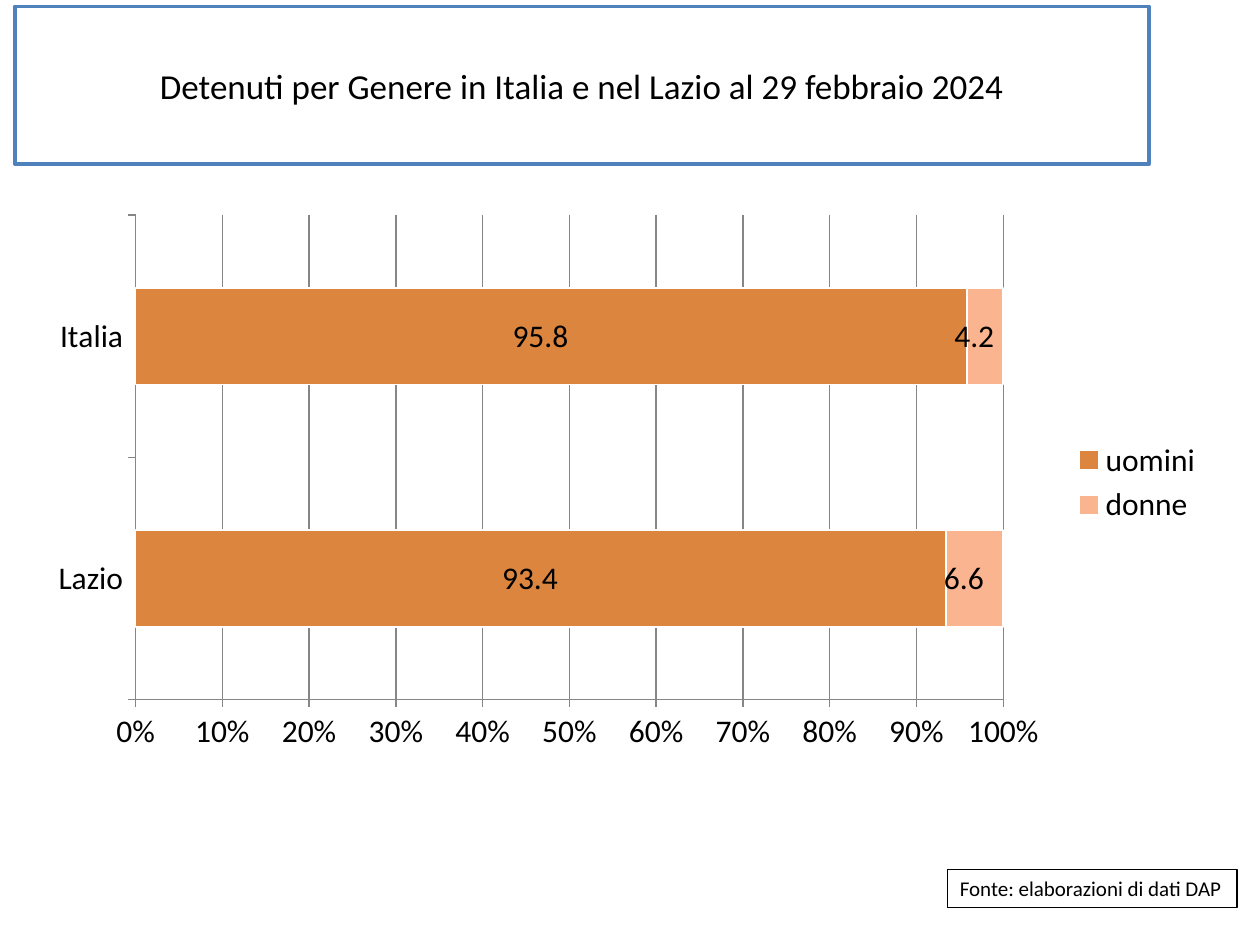
from lxml import etree
from pptx import Presentation
from pptx.chart.data import CategoryChartData
from pptx.dml.color import RGBColor
from pptx.enum.chart import XL_CHART_TYPE, XL_LABEL_POSITION, XL_LEGEND_POSITION, XL_TICK_MARK
from pptx.enum.shapes import MSO_SHAPE
from pptx.enum.text import MSO_ANCHOR, PP_ALIGN
from pptx.oxml.ns import qn
from pptx.util import Cm, Pt

RECT = MSO_SHAPE.RECTANGLE
BAR = XL_CHART_TYPE.BAR_STACKED_100
CENTER_LABEL = XL_LABEL_POSITION.CENTER
RIGHT = XL_LEGEND_POSITION.RIGHT
OUTSIDE = XL_TICK_MARK.OUTSIDE
MIDDLE = MSO_ANCHOR.MIDDLE
LEFT, CENTER = PP_ALIGN.LEFT, PP_ALIGN.CENTER

FONT = "Calibri"
BLACK = RGBColor(0x00, 0x00, 0x00)
WHITE = RGBColor(0xFF, 0xFF, 0xFF)
BLUE = RGBColor(0x4F, 0x81, 0xBD)
GRAY = RGBColor(0x86, 0x86, 0x86)
ORANGE = RGBColor(0xDC, 0x85, 0x3E)
PEACH = RGBColor(0xFA, 0xB4, 0x90)

LABEL_FORMAT = r"_-* #,##0.0\ _€_-;\-* #,##0.0\ _€_-;_-* "
CATEGORIES = ["Lazio", "Italia"]
SERIES = [("uomini", [93.4, 95.8], ORANGE), ("donne", [6.6, 4.2], PEACH)]


def set_font(font, size):
    font.name, font.size = FONT, Pt(size)
    font.color.rgb = BLACK


def add_text(tf, text, size=12, align=LEFT, wrap=True):
    tf.word_wrap = wrap
    tf.vertical_anchor = MIDDLE
    p = tf.paragraphs[0]
    p.alignment = align
    r = p.add_run()
    r.text = text
    set_font(r.font, size)


def add_box(s, box, text, line, line_width, **text_format):
    sp = s.shapes.add_shape(RECT, *map(Cm, box))
    sp.shadow.inherit = False
    sp.fill.solid()
    sp.fill.fore_color.rgb = WHITE
    sp.line.color.rgb = line
    sp.line.width = Pt(line_width)
    add_text(sp.text_frame, text, **text_format)


def set_plot_area(chart, **fractions):
    """Fix the inner plot area as fractions of the chart."""
    plot_area = chart.plots[0]._element.getparent()
    for old in plot_area.findall(qn("c:layout")):
        plot_area.remove(old)
    layout = etree.Element(qn("c:layout"))
    manual = etree.SubElement(layout, qn("c:manualLayout"))
    settings = {"layoutTarget": "inner", "xMode": "edge", "yMode": "edge", **fractions}
    for name, value in settings.items():
        etree.SubElement(manual, qn("c:" + name)).set("val", str(value))
    plot_area.insert(0, layout)


def add_gender_chart(s, box):
    data = CategoryChartData()
    data.categories = CATEGORIES
    for name, values, _ in SERIES:
        data.add_series(name, values)
    chart = s.shapes.add_chart(BAR, *map(Cm, box), data).chart
    set_font(chart.font, 18)
    chart.has_title = False
    set_plot_area(chart, x=0.085, y=0.02, w=0.735, h=0.87)

    # Legend
    chart.has_legend = True
    chart.legend.position = RIGHT
    chart.legend.include_in_layout = False

    # Axes
    for axis in (chart.category_axis, chart.value_axis):
        axis.major_tick_mark = OUTSIDE
        axis.format.line.color.rgb = GRAY
    axis = chart.value_axis
    axis.minimum_scale, axis.maximum_scale, axis.major_unit = 0, 1, 0.1
    axis.has_major_gridlines = True
    axis.major_gridlines.format.line.color.rgb = GRAY
    axis.tick_labels.number_format = "0%"
    axis.tick_labels.number_format_is_linked = False

    # Bars and their values
    plot = chart.plots[0]
    plot.gap_width, plot.overlap = 150, 100
    plot.vary_by_categories = False
    for series, (_, _, color) in zip(plot.series, SERIES):
        series.format.fill.solid()
        series.format.fill.fore_color.rgb = color
        series.format.line.color.rgb = WHITE
        series.format.line.width = Pt(1)
        labels = series.data_labels
        labels.show_value = True
        labels.position = CENTER_LABEL
        labels.number_format = LABEL_FORMAT
        labels.number_format_is_linked = False
        set_font(labels.font, 18)


def main():
    prs = Presentation()
    prs.slide_width, prs.slide_height = Cm(25.4), Cm(19.05)
    s = prs.slides.add_slide(prs.slide_layouts[6])
    # Title
    add_box(s, (0.3, 0.13, 22.86, 3.18),
            "Detenuti per Genere in Italia e nel Lazio al 29 febbraio 2024",
            BLUE, 2, size=20, align=CENTER)
    # Source note
    add_box(s, (19.1, 17.53, 5.84, 0.76), "Fonte: elaborazioni di dati DAP",
            BLACK, 0.75, wrap=False)
    add_gender_chart(s, (0.71, 4.11, 23.8, 11.23))
    prs.save("out.pptx")


if __name__ == "__main__":
    main()
